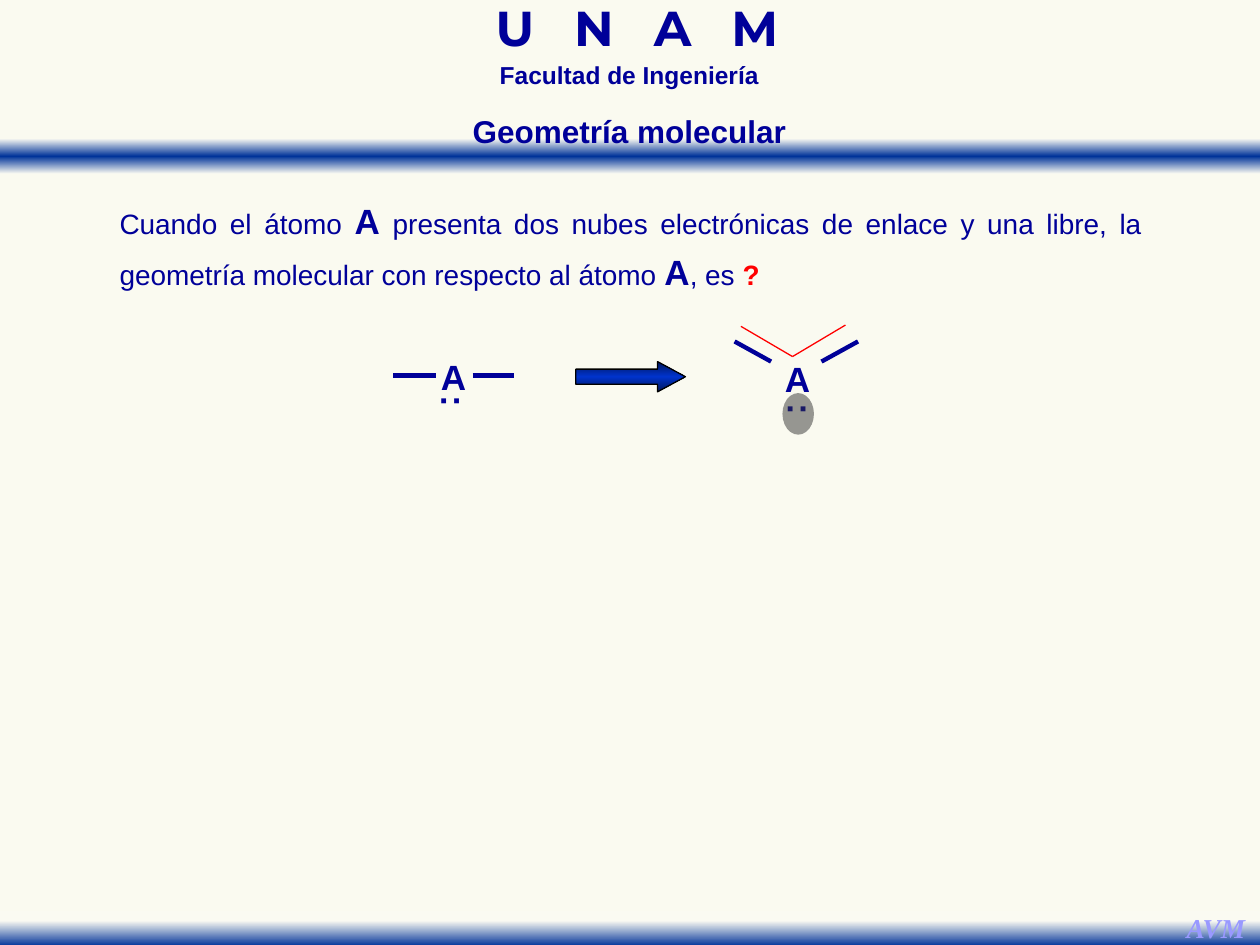
from dataclasses import dataclass

from lxml.etree import SubElement
from pptx import Presentation
from pptx.dml.color import RGBColor
from pptx.enum.shapes import MSO_CONNECTOR as Connector, MSO_SHAPE as Shape
from pptx.enum.text import MSO_AUTO_SIZE as AutoSize, PP_ALIGN as Align
from pptx.oxml.ns import qn
from pptx.util import Inches, Pt


@dataclass(frozen=True)
class Theme:
    paper: str = "FAFAF0"
    fade: str = "FAFAF2"
    band: str = "003399"
    ink: str = "000099"
    accent: str = "FF0000"
    signature: str = "9999FF"
    arrow_edge: str = "00175C"
    arrow_core: str = "0033CC"
    outline: str = "000000"
    cloud: str = "333333"
    font: str = "Arial"
    banner_font: str = "Montserrat"
    signature_font: str = "Times New Roman"
    banner_size: float = 28
    atom_size: float = 20
    title_size: float = 18
    body_size: float = 16
    signature_size: float = 15.6
    faculty_size: float = 14
    bond_width: float = 2.5
    thin_width: float = 0.75


THEME = Theme()


def color(code):
    return RGBColor.from_string(code)


def style(span, size, code=THEME.ink, bold=True, name=THEME.font):
    span.font.size = Pt(size)
    span.font.color.rgb = color(code)
    span.font.bold = bold
    span.font.name = name
    return span


def add_text(shapes, area, align=Align.CENTER, spacing=None, wrap=True, margin=None):
    box = shapes.add_textbox(*map(Inches, area))
    frame = box.text_frame
    frame.word_wrap = wrap
    frame.auto_size = AutoSize.SHAPE_TO_FIT_TEXT
    if margin is not None:
        frame.margin_left = frame.margin_right = Inches(margin)
        frame.margin_top = frame.margin_bottom = Inches(margin)
    para = frame.paragraphs[0]
    para.alignment = align
    if spacing:
        para.line_spacing = spacing
    return box, para


def add_label(shapes, area, text, size, code=THEME.ink, name=THEME.font, **layout):
    box, para = add_text(shapes, area, **layout)
    para.text = text
    return box, style(para.runs[0], size, code, name=name)


def add_figure(shapes, kind, area):
    figure = shapes.add_shape(kind, *map(Inches, area))
    figure.shadow.inherit = False
    figure.line.fill.background()
    return figure


def fill_gradient(figure, stops):
    figure.fill.gradient()
    figure.fill.gradient_angle = 270
    stop_list = figure._element.spPr.find(qn("a:gradFill")).find(qn("a:gsLst"))
    for old in list(stop_list):
        stop_list.remove(old)
    for percent, code in stops:
        stop = SubElement(stop_list, qn("a:gs"), pos=str(percent * 1000))
        SubElement(stop, qn("a:srgbClr"), val=code)


def add_line(shapes, start, end, code=THEME.ink, width=THEME.bond_width):
    line = shapes.add_connector(Connector.STRAIGHT, *map(Inches, (*start, *end)))
    line.line.color.rgb = color(code)
    line.line.width = Pt(width)
    SubElement(line._element.spPr, qn("a:effectLst"))


def add_molecule(page, atom, pair, bonds):
    shapes = page.shapes.add_group_shape().shapes
    add_label(shapes, (*atom, 0.2, 0.33), "A", THEME.atom_size,
              align=Align.JUSTIFY, wrap=False, margin=0)
    for start, end in bonds:
        add_line(shapes, start, end)
    dots, _ = add_label(shapes, (*pair, 0.29, 0.43), ":", THEME.atom_size,
                        align=Align.JUSTIFY, wrap=False)
    dots.rotation = 90
    return shapes


def add_cloud(shapes, area):
    cloud = add_figure(shapes, Shape.OVAL, area)
    cloud.fill.solid()
    cloud.fill.fore_color.rgb = color(THEME.cloud)
    tint = cloud._element.spPr.find(qn("a:solidFill"))[0]
    SubElement(tint, qn("a:alpha"), val="50000")


def add_frame(page):
    shapes = page.shapes
    header = add_figure(shapes, Shape.RECTANGLE, (0, 1.1, 10, 0.28))
    fill_gradient(header, [(0, THEME.fade), (50, THEME.band), (100, THEME.fade)])
    _, banner = add_label(shapes, (3.1, 0.06, 3.91, 0.43), "U N A M",
                          THEME.banner_size, name=THEME.banner_font, spacing=0.7)
    banner._r.get_or_add_rPr().set("spc", "750")
    add_label(shapes, (3.21, 0.49, 3.57, 0.27), "Facultad de Ingeniería",
              THEME.faculty_size, spacing=0.7)
    footer = add_figure(shapes, Shape.RECTANGLE, (0, 7.23, 10, 0.28))
    fill_gradient(footer, [(28, THEME.fade), (100, THEME.band)])
    _, signature = add_label(shapes, (9.31, 7.18, 0.68, 0.37), "AVM",
                             THEME.signature_size, THEME.signature,
                             THEME.signature_font, wrap=False)
    signature.font.italic = True


def add_statement(page):
    _, para = add_text(page.shapes, (0.85, 1.47, 8.31, 0.9), Align.JUSTIFY, 1.2)
    plain = (THEME.body_size, THEME.ink, False)
    atom = (THEME.atom_size, THEME.ink, True)
    parts = [
        ("Cuando el átomo ", plain),
        ("A", atom),
        (" presenta dos nubes electrónicas de enlace y una libre, "
         "la geometría molecular con respecto al átomo ", plain),
        ("A", atom),
        (", es ", plain),
        ("?", (THEME.body_size, THEME.accent, True)),
    ]
    for text, look in parts:
        span = para.add_run()
        span.text = text
        style(span, *look)


def add_arrow(page):
    arrow = add_figure(page.shapes, Shape.RIGHT_ARROW, (4.57, 2.87, 0.87, 0.24))
    arrow.adjustments[0] = 0.5
    arrow.adjustments[1] = 0.92
    fill_gradient(arrow, [(0, THEME.arrow_edge), (50, THEME.arrow_core),
                          (100, THEME.arrow_edge)])
    arrow.line.color.rgb = color(THEME.outline)
    arrow.line.width = Pt(THEME.thin_width)


def main():
    deck = Presentation()
    deck.slide_width, deck.slide_height = Inches(10), Inches(7.5)
    page = deck.slides.add_slide(deck.slide_layouts[6])
    page.background.fill.solid()
    page.background.fill.fore_color.rgb = color(THEME.paper)

    add_frame(page)
    add_statement(page)
    add_molecule(page, (3.5, 2.82), (3.47, 2.97),
                 [((3.75, 2.98), (4.08, 2.98)), ((3.12, 2.98), (3.46, 2.98))])
    add_arrow(page)
    bent = add_molecule(page, (6.23, 2.84), (6.22, 3.03),
                        [((6.52, 2.87), (6.81, 2.71)), ((6.12, 2.87), (5.83, 2.71))])
    add_cloud(bent, (6.21, 3.12, 0.25, 0.33))
    for tip in ((5.88, 2.59), (6.71, 2.58)):
        add_line(page.shapes, (6.29, 2.83), tip, THEME.accent, THEME.thin_width)
    add_label(page.shapes, (3.64, 0.84, 2.71, 0.4), "Geometría molecular",
              THEME.title_size, wrap=False)
    deck.save("out.pptx")


if __name__ == "__main__":
    main()
